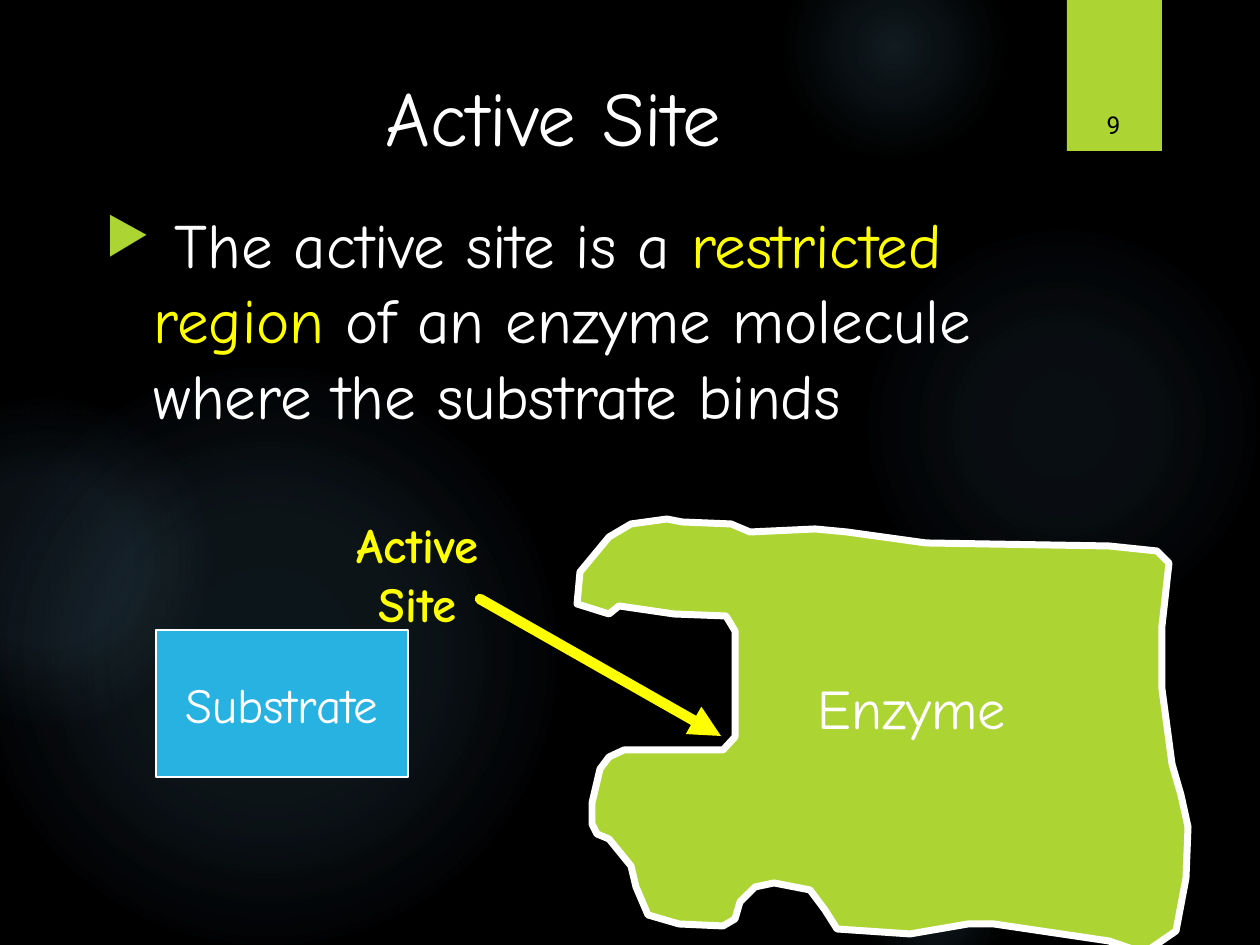
from lxml.etree import SubElement
from pptx import Presentation
from pptx.dml.color import RGBColor
from pptx.enum.shapes import MSO_CONNECTOR, MSO_SHAPE
from pptx.enum.text import MSO_ANCHOR, PP_ALIGN
from pptx.oxml.ns import qn
from pptx.util import Emu, Pt

PX = 914400 / 126
COMIC, ROBOTO = "Comic Neue", "Roboto"
WHITE, YELLOW, BLACK = "FFFFFF", "FFFF00", "000000"
GREEN, BLUE, GLOW = "ACD433", "27B2E1", "7AC4F0"

GLOWS = [
    (868, 231, 388, 7, 6),
    (784, -63, 220, 14, 7),
    (868, 840, 136, 14, 7),
    (-21, 368, 577, 11, 10),
    (-116, 399, 325, 8, 8),
]
PAGE_TAB = (1067, 0, 95, 151)
TITLE = [("Active Site", WHITE)]
DEFINITION = [
    (" ", YELLOW),
    ("The active site is a ", WHITE),
    ("restricted region ", YELLOW),
    ("of an enzyme molecule where the substrate binds", WHITE),
]
PAGE_NUMBER = [("9", BLACK)]
ENZYME_LABEL = [("Enzyme", WHITE)]
SUBSTRATE_LABEL = [("Substrate", WHITE)]
SITE_LABEL = [("Active Site", YELLOW)]
SITE_ARROW = (480, 599, 721, 736)
ENZYME_OUTLINE = [
    (619, 606), (674, 614), (726, 616), (735, 631), (735, 737), (723, 750),
    (624, 750), (609, 757), (600, 769), (592, 803), (592, 824), (597, 834),
    (609, 839), (631, 866), (636, 887), (648, 915), (679, 924), (723, 926),
    (735, 919), (740, 902), (755, 887), (774, 883), (810, 890), (825, 910),
    (837, 929), (910, 934), (968, 924), (994, 924), (1109, 941), (1144, 953),
    (1176, 931), (1186, 878), (1188, 827), (1181, 795), (1172, 764),
    (1162, 689), (1162, 626), (1169, 563), (1157, 551), (1109, 546),
    (926, 543), (847, 532), (815, 529), (750, 532), (731, 524), (682, 522),
    (667, 519), (631, 524), (609, 537), (580, 572), (577, 604), (609, 614),
]


def px(*lengths):
    return [Emu(round(length * PX)) for length in lengths]


def color(value):
    return RGBColor.from_string(value)


def child(parent, tag, **attributes):
    return SubElement(parent, qn(tag), {k: str(v) for k, v in attributes.items()})


def paint(shape, fill, line=None, width=0):
    shape.shadow.inherit = False
    shape.fill.solid()
    shape.fill.fore_color.rgb = color(fill)
    if line:
        shape.line.color.rgb = color(line)
        shape.line.width = Pt(width)
    else:
        shape.line.fill.background()


def add_glow(slide, left, top, size, core, middle):
    glow = slide.shapes.add_shape(MSO_SHAPE.OVAL, *px(left, top, size, size))
    paint(glow, GLOW)
    solid = glow._element.spPr.find(qn("a:solidFill"))
    gradient = solid.makeelement(qn("a:gradFill"), {"rotWithShape": "1"})
    solid.getparent().replace(solid, gradient)
    stop_list = child(gradient, "a:gsLst")
    for position, opacity in zip((0, 36, 72), (core, middle, 0)):
        stop = child(stop_list, "a:gs", pos=position * 1000)
        tint = child(stop, "a:srgbClr", val=GLOW)
        child(tint, "a:alpha", val=opacity * 1000)
    circle = child(gradient, "a:path", path="circle")
    child(circle, "a:fillToRect", **dict.fromkeys("ltrb", 50000))


def write(shape, runs, size, font=COMIC, align=PP_ALIGN.LEFT,
          anchor=MSO_ANCHOR.TOP, wrap=True, bold=False):
    frame = shape.text_frame
    frame.word_wrap = wrap
    frame.vertical_anchor = anchor
    paragraph = frame.paragraphs[0]
    paragraph.alignment = align
    for text, ink in runs:
        run = paragraph.add_run()
        run.text = text
        run.font.name = font
        run.font.size = Pt(size)
        run.font.bold = bold
        run.font.color.rgb = color(ink)
    return paragraph


def add_text(slide, place, runs, size, **style):
    return write(slide.shapes.add_textbox(*px(*place)), runs, size, **style)


def add_bullet(paragraph):
    paragraph.space_before = Pt(10)
    properties = paragraph._p.get_or_add_pPr()
    indent = px(48)[0]
    properties.set("marL", str(indent))
    properties.set("indent", str(-indent))
    child(child(properties, "a:buClr"), "a:srgbClr", val=GREEN)
    child(properties, "a:buSzPct", val=80000)
    child(properties, "a:buChar", char="▶")


def add_arrow(slide, ends):
    arrow = slide.shapes.add_connector(MSO_CONNECTOR.STRAIGHT, *px(*ends))
    arrow.line.color.rgb = color(YELLOW)
    arrow.line.width = Pt(6)
    outline = arrow.line._get_or_add_ln()
    outline.set("cap", "rnd")
    child(outline, "a:tailEnd", type="triangle")
    child(arrow._element.spPr, "a:effectLst")


def main():
    deck = Presentation()
    deck.slide_width, deck.slide_height = px(1260, 945)
    slide = deck.slides.add_slide(deck.slide_layouts[6])
    slide.background.fill.solid()
    slide.background.fill.fore_color.rgb = color(BLACK)

    for glow in GLOWS:
        add_glow(slide, *glow)
    page_tab = slide.shapes.add_shape(MSO_SHAPE.RECTANGLE, *px(*PAGE_TAB))
    paint(page_tab, GREEN)

    add_text(slide, (67, 63, 973, 193), TITLE, 44, align=PP_ALIGN.CENTER)
    add_bullet(add_text(slide, (93, 199, 1043, 578), DEFINITION, 36))
    add_text(slide, (1070, 40, 87, 106), PAGE_NUMBER, 14, font=ROBOTO,
             align=PP_ALIGN.CENTER, anchor=MSO_ANCHOR.BOTTOM)

    outline = slide.shapes.build_freeform(*ENZYME_OUTLINE[0], scale=PX)
    outline.add_line_segments(ENZYME_OUTLINE[1:], close=True)
    paint(outline.convert_to_shape(), GREEN, WHITE, 4)
    add_text(slide, (805, 667, 223, 79), ENZYME_LABEL, 32, wrap=False)

    substrate = slide.shapes.add_shape(MSO_SHAPE.RECTANGLE, *px(156, 630, 252, 147))
    paint(substrate, BLUE, WHITE, 1)
    write(substrate, SUBSTRATE_LABEL, 28, align=PP_ALIGN.CENTER,
          anchor=MSO_ANCHOR.MIDDLE, wrap=False)

    add_text(slide, (307, 508, 221, 130), SITE_LABEL, 28,
             align=PP_ALIGN.CENTER, bold=True)
    add_arrow(slide, SITE_ARROW)
    deck.save("out.pptx")


if __name__ == "__main__":
    main()
